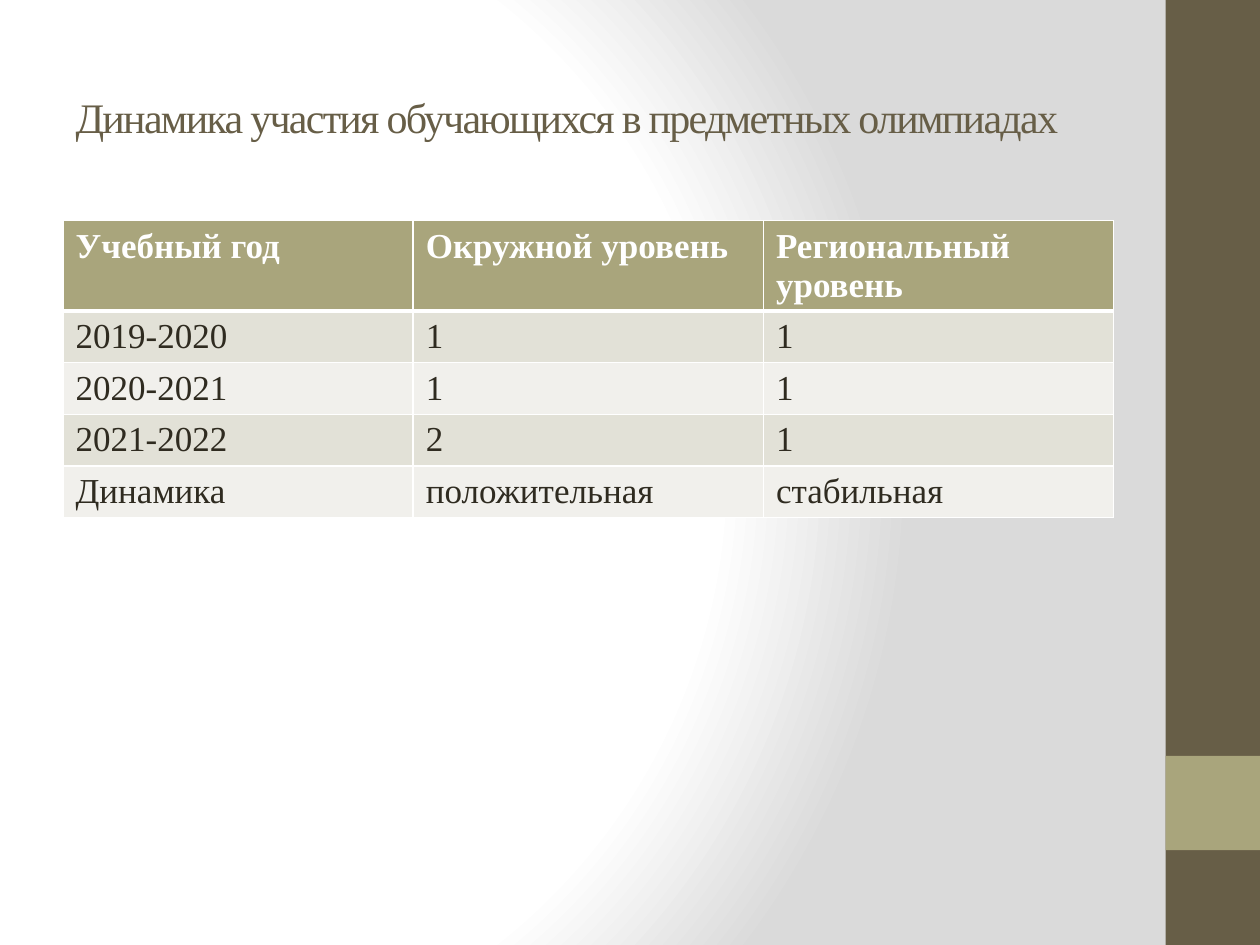
from typing import NamedTuple

from lxml.etree import SubElement
from pptx import Presentation
from pptx.dml.color import RGBColor
from pptx.enum.shapes import MSO_SHAPE
from pptx.enum.text import MSO_ANCHOR, MSO_AUTO_SIZE, PP_ALIGN
from pptx.oxml import parse_xml
from pptx.oxml.ns import nsdecls, qn
from pptx.util import Cm, Pt

FONT = "Times New Roman"
BROWN, OLIVE, WHITE, DARK = "675E47", "A9A57C", "FFFFFF", "2F2B20"
BANDS = "E2E1D7", "F1F0EC"
STOPS = (0, WHITE), (75, WHITE), (100, "DADADA")

ROWS = (
    ("Учебный год", "Окружной уровень", "Региональный уровень"),
    ("2019-2020", "1", "1"),
    ("2020-2021", "1", "1"),
    ("2021-2022", "2", "1"),
    ("Динамика", "положительная", "стабильная"),
)


class Block(NamedTuple):
    top: float
    height: float
    color: str


BLOCKS = Block(0, 19.05, BROWN), Block(15.24, 1.9, OLIVE)


def paint(fill, color: str) -> None:
    fill.solid()
    fill.fore_color.rgb = RGBColor.from_string(color)


def write(frame, text: str, size: int, color: str, bold: bool = False):
    """Add one run to the first paragraph and return it."""
    run = frame.paragraphs[0].add_run()
    run.text = text
    run.font.name = FONT
    run.font.size = Pt(size)
    run.font.bold = bold
    run.font.color.rgb = RGBColor.from_string(color)
    return run


def shade(slide) -> None:
    """Give the slide a circular gradient background."""
    paint(slide.background.fill, WHITE)
    solid = slide.element.find(".//" + qn("p:bgPr")).find(qn("a:solidFill"))
    stops = "".join(
        f'<a:gs pos="{pos * 1000}"><a:srgbClr val="{color}"/></a:gs>'
        for pos, color in STOPS
    )
    grad = parse_xml(
        f'<a:gradFill {nsdecls("a")} rotWithShape="1"><a:gsLst>{stops}</a:gsLst>'
        '<a:path path="circle">'
        '<a:fillToRect l="20000" t="50000" r="100000" b="50000"/>'
        "</a:path></a:gradFill>"
    )
    solid.getparent().replace(solid, grad)


def draw_block(slide, block: Block) -> None:
    shape = slide.shapes.add_shape(
        MSO_SHAPE.RECTANGLE, Cm(23.5), Cm(block.top), Cm(1.9), Cm(block.height)
    )
    shape.shadow.inherit = False
    paint(shape.fill, block.color)
    shape.line.fill.background()


def set_title(slide, text: str) -> None:
    title = slide.shapes.title
    title.left, title.top = Cm(1.27), Cm(0.76)
    title.width, title.height = Cm(21.17), Cm(3.18)
    frame = title.text_frame
    frame.word_wrap = True
    frame.auto_size = MSO_AUTO_SIZE.NONE
    frame.vertical_anchor = MSO_ANCHOR.MIDDLE
    frame.paragraphs[0].alignment = PP_ALIGN.LEFT
    run = write(frame, text, 24, BROWN)
    run.font._element.set("spc", "-100")


def edge(cell, side: str, width: float) -> None:
    """Add a white border; must come before the cell's fill."""
    props = cell._tc.get_or_add_tcPr()
    line = SubElement(props, qn(f"a:ln{side}"), w=str(Pt(width)))
    fill = SubElement(line, qn("a:solidFill"))
    SubElement(fill, qn("a:srgbClr"), val=WHITE)


def draw_table(slide) -> None:
    table = slide.shapes.add_table(
        len(ROWS), len(ROWS[0]), Cm(1.27), Cm(4.45), Cm(21.17), Cm(5.2)
    ).table
    for col in table.columns:
        col.width = Cm(7.06)
    for r, texts in enumerate(ROWS):
        head = r == 0
        table.rows[r].height = Cm(1.04)
        for c, text in enumerate(texts):
            cell = table.cell(r, c)
            for side in "LRTB":
                thick = (head and side == "B") or (r == 1 and side == "T")
                edge(cell, side, 3 if thick else 1)
            paint(cell.fill, OLIVE if head else BANDS[(r - 1) % 2])
            write(cell.text_frame, text, 20, WHITE if head else DARK, head)


def main() -> None:
    deck = Presentation()
    deck.slide_width, deck.slide_height = Cm(25.4), Cm(19.05)
    slide = deck.slides.add_slide(deck.slide_layouts[5])
    shade(slide)
    for block in BLOCKS:
        draw_block(slide, block)
    set_title(slide, "Динамика участия обучающихся в предметных олимпиадах")
    draw_table(slide)
    deck.save("out.pptx")


if __name__ == "__main__":
    main()
